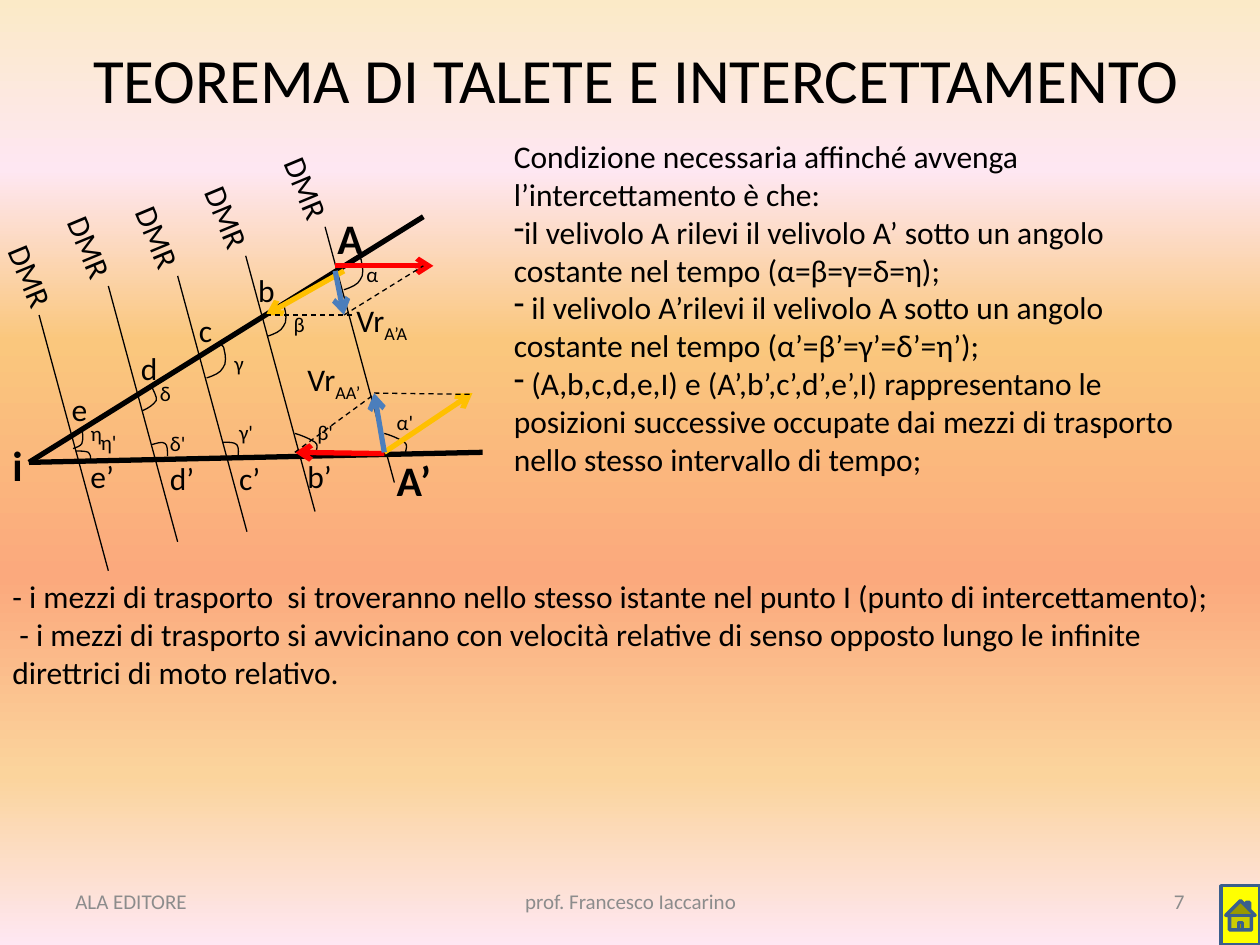
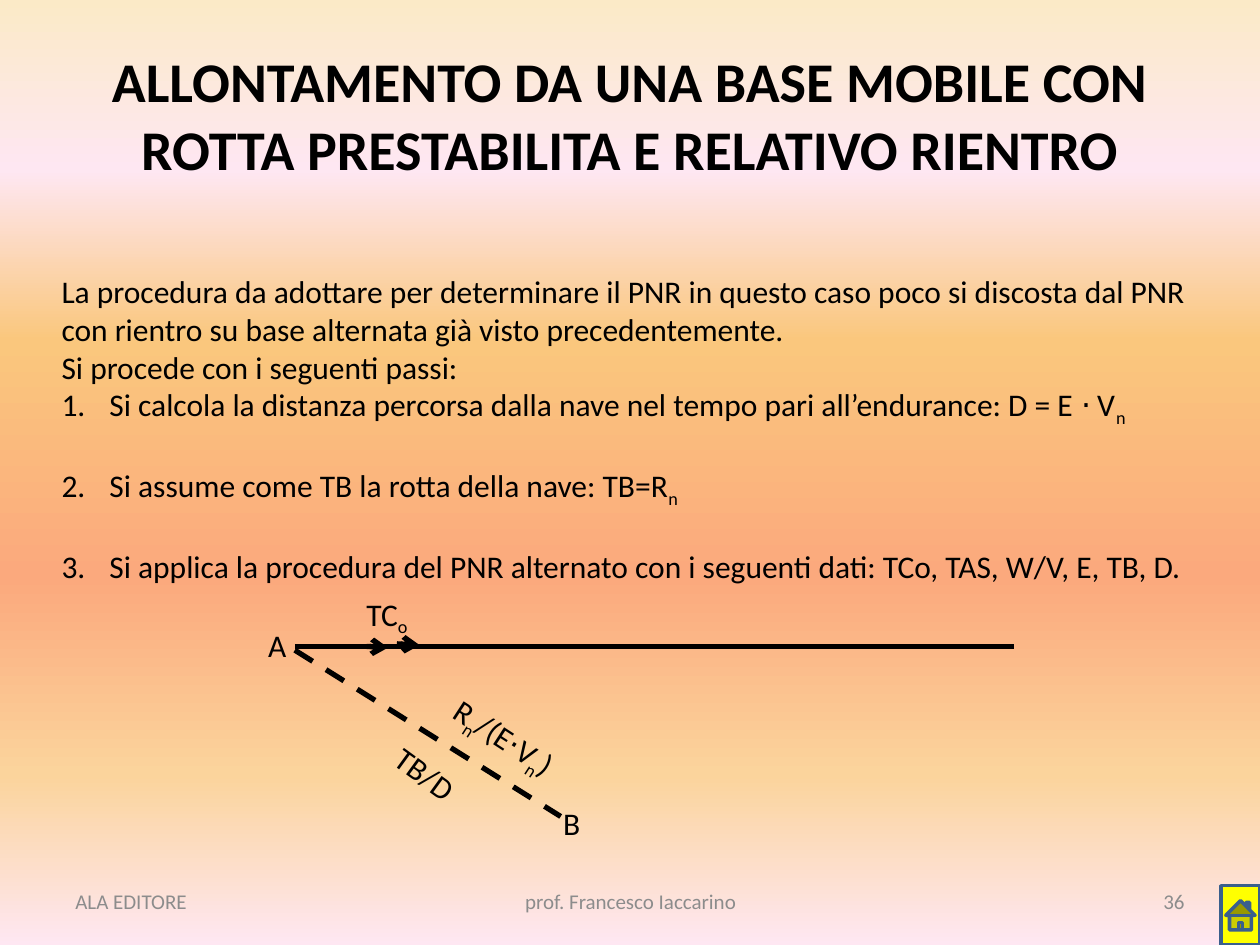
from lxml import etree
from pptx import Presentation
from pptx.dml.color import RGBColor
from pptx.enum import dml, shapes, text
from pptx.oxml.ns import qn
from pptx.util import Inches, Pt

BLACK = RGBColor(0x00, 0x00, 0x00)
GREY = RGBColor(0x8C, 0x8C, 0x8C)
RED = RGBColor(0xFF, 0x00, 0x00)
AMBER = RGBColor(0xFF, 0xC0, 0x00)
BLUE = RGBColor(0x4B, 0x7E, 0xBC)
YELLOW = RGBColor(0xFF, 0xFF, 0x00)
NAVY = RGBColor(0x3A, 0x5F, 0x8C)
SUNSET = [(0, "FBEAC7"), (18, "FEE7F2"), (36, "FAC77D"),
          (61, "FBA97D"), (82, "FBD49C"), (100, "FEE7F2")]
FONT = "Calibri"
LEFT, CENTER, RIGHT = text.PP_ALIGN.LEFT, text.PP_ALIGN.CENTER, text.PP_ALIGN.RIGHT


def write(parent, box, paragraphs, size=18, bold=False, color=BLACK,
          align=LEFT, middle=False, rotation=0):
    """Add a text box; within a paragraph, text between ~ marks is subscript."""
    label = parent.shapes.add_textbox(*map(Inches, box))
    label.rotation = rotation
    frame = label.text_frame
    frame.word_wrap = True
    if middle:
        frame.vertical_anchor = text.MSO_ANCHOR.MIDDLE
    else:
        frame.auto_size = text.MSO_AUTO_SIZE.SHAPE_TO_FIT_TEXT
    for i, line in enumerate(paragraphs):
        paragraph = frame.add_paragraph() if i else frame.paragraphs[0]
        paragraph.alignment = align
        first, *rest = line.split("~")
        paragraph.text = first
        for j, piece in enumerate(rest):
            run = paragraph.add_run()
            run.text = piece
            if j % 2 == 0:
                run._r.get_or_add_rPr().set("baseline", "-25000")
        for run in paragraph.runs:
            run.font.name, run.font.size = FONT, Pt(size)
            run.font.bold, run.font.color.rgb = bold, color
    return frame


def draw_line(parent, start, end, color=BLACK, width=0.75, dashed=False, arrow=False):
    line = parent.shapes.add_connector(
        shapes.MSO_CONNECTOR.STRAIGHT, *map(Inches, (*start, *end)))
    line.line.color.rgb = color
    line.line.width = Pt(width)
    if dashed:
        line.line.dash_style = dml.MSO_LINE.DASH
    if arrow:
        etree.SubElement(line.line._get_or_add_ln(), qn("a:tailEnd"), type="arrow")
    etree.SubElement(line._element.spPr, qn("a:effectLst"))


prs = Presentation()
prs.slide_width, prs.slide_height = Inches(10), Inches(7.5)

# Shared background, title, footer and home button
pages = [
    ("TEOREMA DI TALETE E INTERCETTAMENTO", (0.55, 0, 9, 1.25), 36, False, "7"),
    ("ALLONTAMENTO DA UNA BASE MOBILE CON ROTTA PRESTABILITA E RELATIVO RIENTRO",
     (0.5, 0.08, 9, 1.65), 32, True, "36"),
]
for title, title_box, title_size, bold, number in pages:
    slide = prs.slides.add_slide(prs.slide_layouts[6])
    backdrop = slide.background.fill
    backdrop.gradient()
    backdrop.gradient_angle = 270
    stops = slide.element.find(".//" + qn("a:gsLst"))
    for stop in list(stops):
        stops.remove(stop)
    for position, tint in SUNSET:
        stop = etree.SubElement(stops, qn("a:gs"), pos=str(position * 1000))
        etree.SubElement(stop, qn("a:srgbClr"), val=tint)

    write(slide, title_box, [title], title_size, bold, align=CENTER, middle=True)
    for left, width, note, align in [(0.5, 2.33, "ALA EDITORE", LEFT),
                                     (3.42, 3.17, "prof. Francesco Iaccarino", CENTER),
                                     (7.17, 2.33, number, RIGHT)]:
        write(slide, (left, 6.95, width, 0.4), [note], 12, color=GREY,
              align=align, middle=True)
    home = slide.shapes.add_shape(shapes.MSO_SHAPE.ACTION_BUTTON_HOME,
                                  *map(Inches, (9.69, 7.03, 0.31, 0.47)))
    home.shadow.inherit = False
    home.fill.solid()
    home.fill.fore_color.rgb = YELLOW
    home.line.color.rgb, home.line.width = NAVY, Pt(2)

talete, rientro = prs.slides

# Slide 1: conditions for interception
conditions = write(talete, (3.98, 1.04, 5.7, 2.83), [
    "Condizione necessaria affinché avvenga\vl’intercettamento è che:",
    "il velivolo A rilevi il velivolo A’ sotto un angolo costante nel tempo (α=β=γ=δ=η);",
    " il velivolo A’rilevi il velivolo A sotto un angolo costante nel tempo (α’=β’=γ’=δ’=η’);",
    " (A,b,c,d,e,I) e (A’,b’,c’,d’,e’,I) rappresentano le posizioni successive occupate "
    "dai mezzi di trasporto nello stesso intervallo di tempo;",
])
for condition in conditions.paragraphs[1:]:
    properties = condition._p.get_or_add_pPr()
    etree.SubElement(properties, qn("a:buFontTx"))
    etree.SubElement(properties, qn("a:buChar"), char="-")

# Parallel lines of relative motion and the two converging routes
diagram = talete.shapes.add_group_shape()
for x, y in [(0.31, 2.5), (0.86, 2.27), (1.41, 2.19), (1.95, 2.03), (2.58, 1.8)]:
    draw_line(diagram, (x, y), (x + 0.55, y + 2.03))
for route_end in [(3.36, 1.72), (3.83, 3.59)]:
    draw_line(diagram, (0.23, 3.67), route_end, width=3)

# Successive positions
for vehicle, x, y, width in [("A", 2.58, 1.64, 0.31), ("A’", 3.05, 3.56, 0.7)]:
    write(diagram, (x, y, width, 0.5), [vehicle], 24, True)
for position, x, y, width in [
        ("e", 0.47, 3.05, 0.23), ("d", 1.02, 2.72, 0.31), ("c", 1.48, 2.42, 0.55),
        ("b", 1.95, 2.1, 0.31), ("e’", 0.62, 3.58, 0.47), ("d’", 1.25, 3.59, 0.7),
        ("c’", 1.8, 3.59, 0.78), ("b’", 2.34, 3.58, 0.55)]:
    write(diagram, (x, y, width, 0.4), [position])

# Angle arcs: a start point, then Bezier triples relative to it
upper_arc = [(0.06, -0.02), (0.11, -0.04), (0.13, -0.08),
             (0.16, -0.11), (0.15, -0.19), (0.14, -0.22),
             (0.14, -0.25), (0.12, -0.26), (0.12, -0.26),
             (0.11, -0.27), (0.12, -0.26), (0.13, -0.25)]
lower_arc = [(0.07, 0.02), (0.13, 0.05), (0.16, 0.07),
             (0.19, 0.09), (0.17, 0.13), (0.17, 0.14),
             (0.17, 0.16), (0.17, 0.17), (0.17, 0.17)]
arcs = [
    ((2.12, 2.67), upper_arc), ((1.64, 3.0), upper_arc), ((2.73, 2.3), upper_arc),
    ((2.34, 3.44), lower_arc), ((3.05, 3.44), lower_arc),
    ((0.58, 3.56), [(0.03, -0.01), (0.06, -0.02), (0.07, -0.04),
                    (0.08, -0.07), (0.08, -0.11), (0.07, -0.15)]),
    ((1.13, 3.26), [(0.05, -0.02), (0.09, -0.05), (0.11, -0.08),
                    (0.12, -0.11), (0.08, -0.17), (0.08, -0.18),
                    (0.07, -0.2), (0.08, -0.2), (0.08, -0.19)]),
    ((1.77, 3.51), [(0.05, 0), (0.09, 0), (0.11, 0.02),
                    (0.13, 0.04), (0.12, 0.11), (0.12, 0.12),
                    (0.12, 0.14), (0.12, 0.12), (0.12, 0.1)]),
    ((1.2, 3.53), [(0.04, -0.01), (0.09, -0.03), (0.11, -0.01),
                   (0.13, 0), (0.13, 0.05), (0.13, 0.09)]),
    ((0.6, 3.58), [(0.04, 0), (0.08, 0), (0.1, 0.01),
                   (0.12, 0.03), (0.12, 0.05), (0.12, 0.07)]),
]
for (x, y), controls in arcs:
    builder = diagram.shapes.build_freeform(Inches(x), Inches(y))
    builder.add_line_segments([(Inches(x + dx), Inches(y + dy)) for dx, dy in controls],
                              close=False)
    arc = builder.convert_to_shape()
    arc.shadow.inherit = False
    arc.fill.background()
    arc.line.color.rgb, arc.line.width = BLACK, Pt(0.75)
    # Every three straight segments become one Bezier curve
    outline = arc._element.find(".//" + qn("a:path"))
    segments = outline.findall(qn("a:lnTo"))
    for k in range(0, len(segments), 3):
        curve = etree.SubElement(outline, qn("a:cubicBezTo"))
        for segment in segments[k:k + 3]:
            curve.append(segment[0])
            outline.remove(segment)

for angle, x, y, width in [
        ("β", 2.27, 2.42, 0.16), ("β'", 2.42, 3.28, 0.38), ("γ", 1.8, 2.73, 0.16),
        ("γ'", 1.8, 3.28, 0.46), ("δ'", 1.25, 3.37, 0.39), ("δ", 1.17, 2.97, 0.23),
        ("α'", 3.05, 3.2, 0.38), ("α", 2.81, 2.03, 0.38),
        ("η", 0.62, 3.29, 0.39), ("η'", 0.7, 3.36, 0.39)]:
    write(diagram, (x, y, width, 0.3), [angle], 12)

# Velocity vectors and their parallelograms
vectors = [
    ((3.05, 3.6), (2.34, 3.59), RED), ((2.66, 2.11), (3.44, 2.11), RED),
    ((2.73, 2.15), (2.11, 2.5), AMBER), ((3.05, 3.59), (3.75, 3.12), AMBER),
    ((2.11, 2.5), (2.81, 2.5), BLACK), ((2.97, 3.12), (3.75, 3.13), BLACK),
    ((2.73, 2.5), (3.36, 2.11), BLACK), ((2.34, 3.59), (2.97, 3.13), BLACK),
    ((2.66, 2.15), (2.73, 2.5), BLUE), ((3.05, 3.59), (2.97, 3.12), BLUE),
]
for start, end, color in vectors:
    if color == BLACK:
        draw_line(talete, start, end, dashed=True)
    else:
        draw_line(talete, start, end, color, 3, arrow=True)
write(talete, (2.73, 2.34, 0.78, 0.4), ["Vr~A’A"])
write(talete, (2.34, 2.81, 0.78, 0.4), ["Vr~AA’"])
write(talete, (0, 3.44, 0.47, 0.5), ["i"], 24, True)

# Conclusions
write(talete, (0, 4.53, 9.84, 1.31), [
    "- i mezzi di trasporto  si troveranno nello stesso istante nel punto I "
    "(punto di intercettamento);",
    " - i mezzi di trasporto si avvicinano con velocità relative di senso opposto lungo "
    "le infinite direttrici di moto relativo.",
])
for x, y in [(2.06, 1.33), (1.43, 1.56), (0.88, 1.72), (0.34, 1.8), (-0.13, 2.03)]:
    write(talete, (x, y, 0.78, 0.4), ["DMR"], rotation=67.4)

# Slide 2: procedure
procedure = write(rientro, (0.39, 2.11, 9.14, 2.52), [
    "La procedura da adottare per determinare il PNR in questo caso poco si discosta "
    "dal PNR con rientro su base alternata già visto precedentemente.",
    "Si procede con i seguenti passi:",
    "Si calcola la distanza percorsa dalla nave nel tempo pari all’endurance: D = E ⋅ V~n",
    "Si assume come TB la rotta della nave: TB=R~n",
    "Si applica la procedura del PNR alternato con i seguenti dati: TCo, TAS, W/V, E, TB, D.",
])
for i, step in enumerate(procedure.paragraphs[2:]):
    if i:
        step.space_before = Pt(21.6)
    properties = step._p.get_or_add_pPr()
    properties.set("marL", str(Inches(0.38)))
    properties.set("indent", str(-Inches(0.38)))
    etree.SubElement(properties, qn("a:buAutoNum"), type="arabicPeriod")

# Outbound course with its double arrowhead, and the base's route
draw_line(rientro, (2.34, 5.16), (4.45, 6.48), width=3, dashed=True)
course = rientro.shapes.add_group_shape()
draw_line(course, (2.34, 5.13), (8.05, 5.13), width=3)
for start, end in [((2.91, 5.13), (3.08, 5.14)), ((3.15, 5.11), (3.33, 5.12))]:
    draw_line(course, start, end, width=3, arrow=True)
for label, x, y, width, rotation in [
        ("A", 2.03, 4.92, 0.31, 0), ("B", 4.37, 6.33, 0.31, 0),
        ("TB/D", 2.97, 6.1, 1.25, 36), ("R~n~/(E⋅V~n~)", 3.45, 5.69, 1.23, 33),
        ("TC~o", 2.81, 4.67, 0.7, 0)]:
    write(rientro, (x, y, width, 0.4), [label], rotation=rotation)

prs.save("out.pptx")
